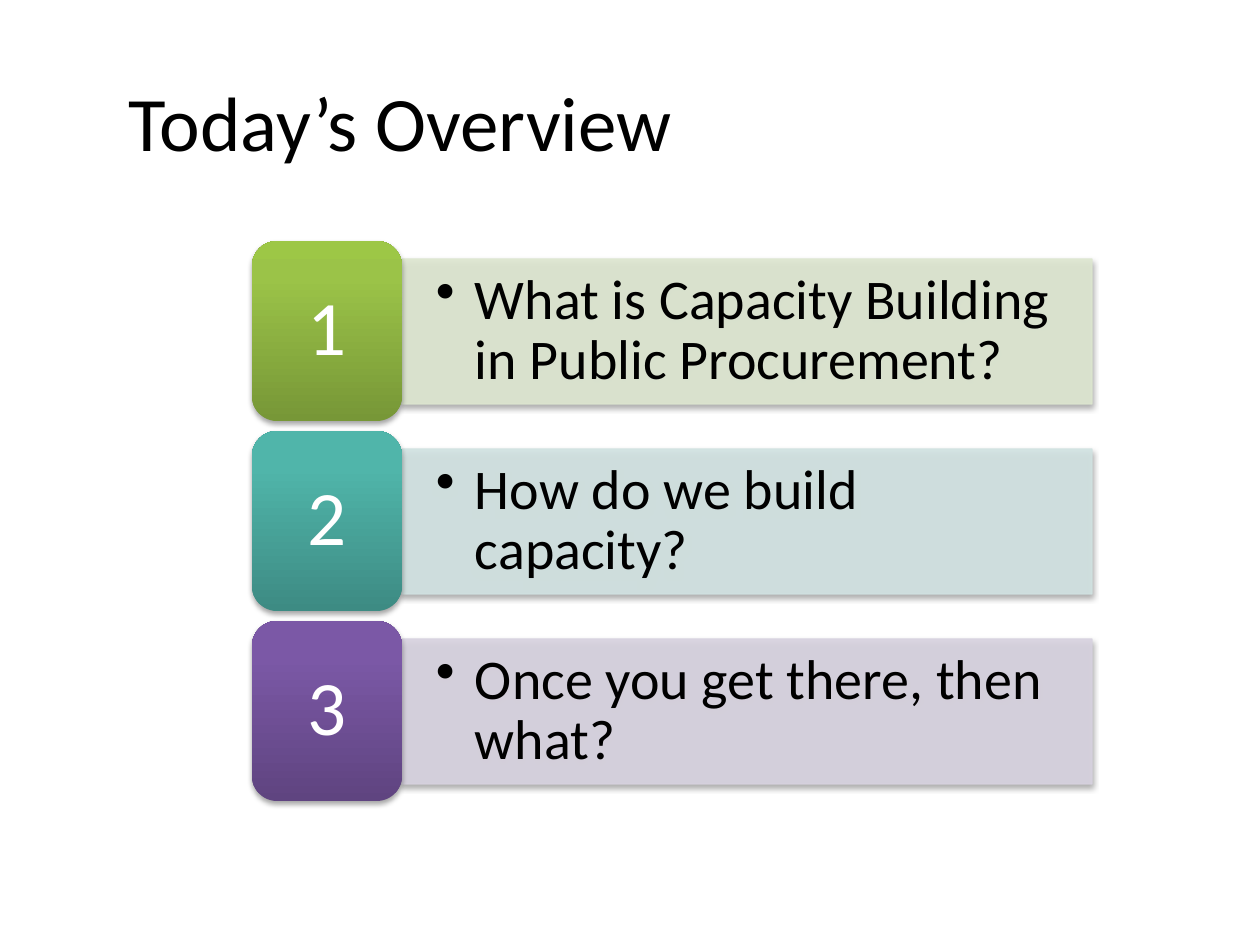
"""Build the overview slide: a title and three numbered agenda rows."""
from lxml.etree import SubElement
from pptx import Presentation
from pptx.dml.color import RGBColor
from pptx.enum.shapes import MSO_SHAPE
from pptx.enum.text import MSO_ANCHOR, PP_ALIGN
from pptx.oxml import parse_xml
from pptx.oxml.ns import nsdecls, qn
from pptx.util import Pt

TITLE = "Today’s Overview"
ROWS = [
    ("1", "What is Capacity Building in Public Procurement?", "green"),
    ("2", "How do we build capacity?", "teal"),
    ("3", "Once you get there, then what?", "purple"),
]
COLORS = {
    "text": "000000", "number": "FFFFFF", "shadow": "000000",
    "green": ("779737", "9BC348", "9DC746"), "green_bar": "DEE7D1",
    "teal": ("3D8B83", "50B5AA", "4EB8AC"), "teal_bar": "D2E3E2",
    "purple": ("5F4480", "7B58A6", "7C57A8"), "purple_bar": "D8D3E0",
}
STOPS = (0, 80, 100)
FONT = "Calibri"
SCALE = 914400 // 126
TITLE_BOX = (116, 42, 1113, 158)
TILE_LEFT, TILE_TOP, TILE_WIDTH, TILE_HEIGHT = 252, 241, 150, 180
BAR_WIDTH, BAR_HEIGHT = 690, 145
ROW_STEP = 190
BULLET_INDENT = 39


def px(value):
    return round(value * SCALE)


def write(shape, text, size, color="text", align=PP_ALIGN.LEFT, insets=(13, 6),
          bullet=False, spacing=None):
    frame = shape.text_frame
    frame.word_wrap = True
    frame.vertical_anchor = MSO_ANCHOR.MIDDLE
    frame.margin_left = frame.margin_right = px(insets[0])
    frame.margin_top = frame.margin_bottom = px(insets[1])
    para = frame.paragraphs[0]
    if bullet:
        properties = para._p.get_or_add_pPr()
        properties.set("marL", str(px(BULLET_INDENT)))
        properties.set("indent", str(-px(BULLET_INDENT)))
        SubElement(properties, qn("a:buChar"), char="•")
    para.alignment = align
    para.line_spacing = spacing
    span = para.add_run()
    span.text = text
    span.font.name = FONT
    span.font.size = Pt(size)
    span.font.color.rgb = RGBColor.from_string(COLORS[color])


def add_panel(page, kind, left, top, width, height):
    panel = page.shapes.add_shape(kind, px(left), px(top), px(width), px(height))
    panel.shadow.inherit = False
    effects = panel._element.spPr.find(qn("a:effectLst"))
    effects.append(parse_xml(
        f'<a:outerShdw {nsdecls("a")} blurRad="40000" dist="23000" dir="5400000" '
        f'rotWithShape="0"><a:srgbClr val="{COLORS["shadow"]}">'
        '<a:alpha val="35000"/></a:srgbClr></a:outerShdw>'))
    return panel


def paint_bar(bar, color):
    bar.fill.solid()
    bar.line.fill.solid()
    bar.line.width = Pt(0.75)
    for paint in (bar.fill, bar.line.fill):
        paint.fore_color.rgb = RGBColor.from_string(color)
    for tone in bar._element.spPr.iter(qn("a:srgbClr")):
        if tone.get("val") == color:
            SubElement(tone, qn("a:alpha"), val="90000")


def paint_tile(tile, colors):
    tile.line.fill.background()
    stops = "".join(
        f'<a:gs pos="{stop * 1000}"><a:srgbClr val="{color}"/></a:gs>'
        for stop, color in zip(STOPS, colors))
    tile._element.spPr.find(qn("a:prstGeom")).addnext(parse_xml(
        f'<a:gradFill {nsdecls("a")} rotWithShape="1"><a:gsLst>{stops}</a:gsLst>'
        '<a:lin ang="16200000" scaled="0"/></a:gradFill>'))


def main():
    deck = Presentation()
    deck.slide_width, deck.slide_height = px(1260), px(945)
    page = deck.slides.add_slide(deck.slide_layouts[5])
    title = page.shapes.title
    title.left, title.top, title.width, title.height = map(px, TITLE_BOX)
    write(title, TITLE, 44)

    for index, (number, question, hue) in enumerate(ROWS):
        top = TILE_TOP + index * ROW_STEP
        bar_top = top + (TILE_HEIGHT - BAR_HEIGHT) // 2 + 1
        bar = add_panel(page, MSO_SHAPE.RECTANGLE, TILE_LEFT + TILE_WIDTH, bar_top,
                        BAR_WIDTH, BAR_HEIGHT)
        paint_bar(bar, COLORS[f"{hue}_bar"])
        write(bar, question, 32, insets=(34, 18), bullet=True, spacing=0.9)
        tile = add_panel(page, MSO_SHAPE.ROUNDED_RECTANGLE, TILE_LEFT, top,
                         TILE_WIDTH, TILE_HEIGHT)
        paint_tile(tile, COLORS[hue])
        write(tile, number, 44, color="number", align=PP_ALIGN.CENTER,
              insets=(23, 11), spacing=0.9)

    deck.save("out.pptx")


if __name__ == "__main__":
    main()
